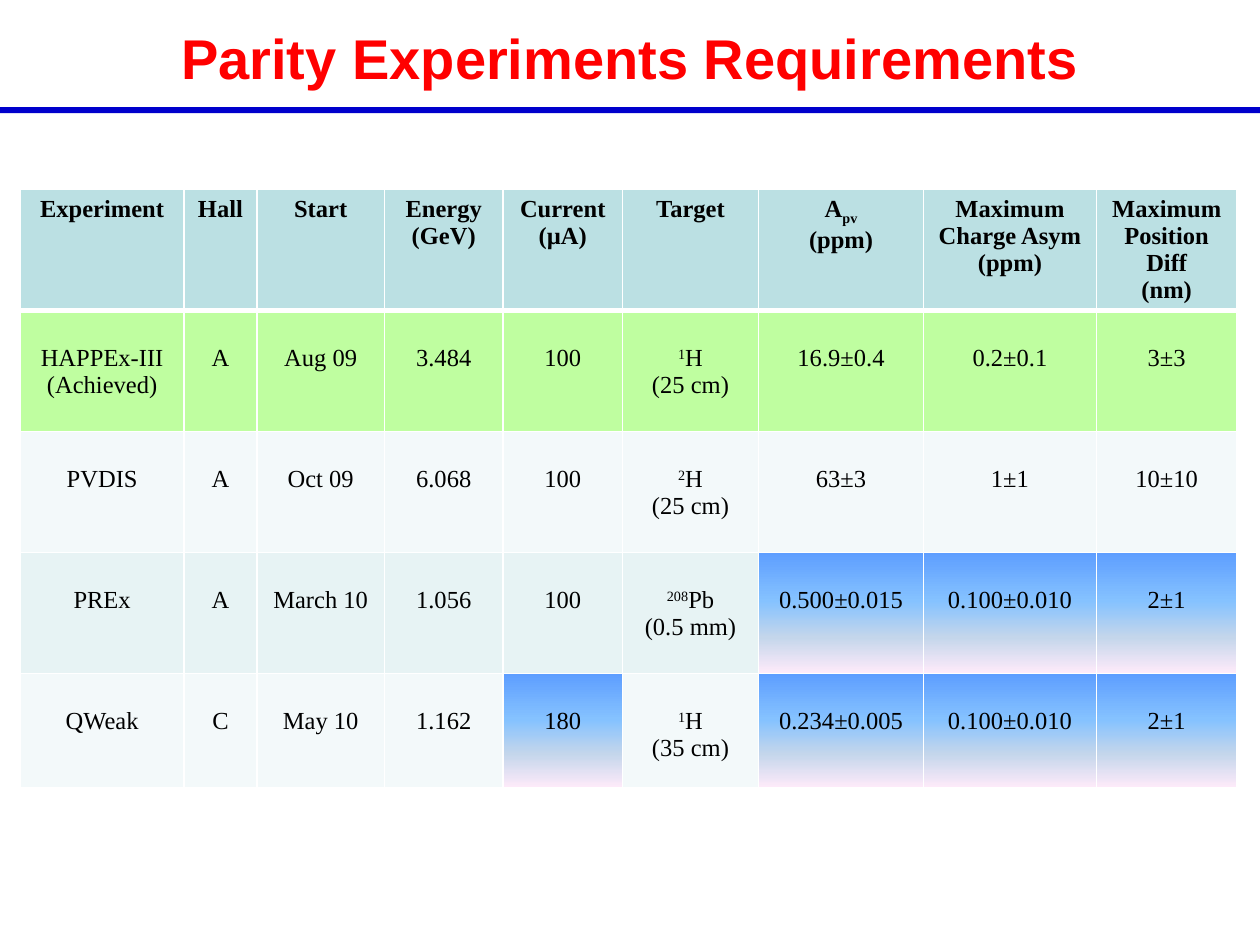
from lxml.etree import SubElement
from pptx import Presentation
from pptx.dml.color import RGBColor
from pptx.enum.shapes import MSO_SHAPE
from pptx.enum.text import MSO_ANCHOR, PP_ALIGN
from pptx.oxml.ns import qn
from pptx.util import Cm, Pt

# Content: ^ encloses a superscript, _ a subscript
TITLE = "Parity Experiments Requirements"
HEADER = ["Experiment", "Hall", "Start", "Energy\n(GeV)", "Current\n(µA)", "Target",
          "A_pv_\n(ppm)", "Maximum Charge Asym\n(ppm)", "Maximum\nPosition Diff\n(nm)"]
EXPERIMENTS = [
    ["HAPPEx-III\n(Achieved)", "A", "Aug 09", "3.484", "100", "^1^H\n(25 cm)",
     "16.9±0.4", "0.2±0.1", "3±3"],
    ["PVDIS", "A", "Oct 09", "6.068", "100", "^2^H\n(25 cm)",
     "63±3", "1±1", "10±10"],
    ["PREx", "A", "March 10", "1.056", "100", "^208^Pb\n(0.5 mm)",
     "0.500±0.015", "0.100±0.010", "2±1"],
    ["QWeak", "C", "May 10", "1.162", "180", "^1^H\n(35 cm)",
     "0.234±0.005", "0.100±0.010", "2±1"],
]
DEMANDING = {(3, 6), (3, 7), (3, 8), (4, 4), (4, 6), (4, 7), (4, 8)}

# Look
RED = RGBColor(0xFF, 0x00, 0x00)
BLUE = RGBColor(0x00, 0x00, 0xCC)
BLACK = RGBColor(0x00, 0x00, 0x00)
WHITE = RGBColor(0xFF, 0xFF, 0xFF)
TEAL = RGBColor(0xBB, 0xE0, 0xE3)
GREEN = RGBColor(0xBF, 0xFE, 0xA0)
PALE = RGBColor(0xF3, 0xF9, 0xFA)
LIGHT_TEAL = RGBColor(0xE7, 0xF3, 0xF4)
ROW_FILLS = [TEAL, GREEN, PALE, LIGHT_TEAL, PALE]
GRADIENT = [(0, RGBColor(0x5E, 0x9E, 0xFF)), (40, RGBColor(0x85, 0xC2, 0xFF)),
            (70, RGBColor(0xC4, 0xD6, 0xEB)), (100, RGBColor(0xFF, 0xEB, 0xFA))]
COLUMN_WIDTHS = [3.3, 1.47, 2.57, 2.39, 2.41, 2.74, 3.33, 3.48, 2.84]
ROW_HEIGHTS = [2.44, 2.44, 2.44, 2.44, 2.31]
BODY_TOP_MARGIN = Cm(0.69)


def add_color(parent, color):
    SubElement(parent, qn("a:srgbClr"), val=str(color))


def set_borders(cell, row):
    properties = cell._tc.get_or_add_tcPr()
    for side in "LRTB":
        thick = (row, side) in {(0, "B"), (1, "T")}
        line = SubElement(properties, qn(f"a:ln{side}"), w=str(Pt(3 if thick else 1)))
        add_color(SubElement(line, qn("a:solidFill")), WHITE)


def set_gradient(cell):
    gradient = SubElement(cell._tc.get_or_add_tcPr(), qn("a:gradFill"), rotWithShape="1")
    stops = SubElement(gradient, qn("a:gsLst"))
    for percent, color in GRADIENT:
        add_color(SubElement(stops, qn("a:gs"), pos=str(percent * 1000)), color)
    SubElement(gradient, qn("a:lin"), ang="5400000", scaled="0")


def write_cell(cell, text, bold):
    frame = cell.text_frame
    for index, line in enumerate(text.split("\n")):
        para = frame.paragraphs[0] if index == 0 else frame.add_paragraph()
        para.alignment = PP_ALIGN.CENTER
        mark, baseline = ("_", "-25000") if "_" in line else ("^", "30000")
        for position, piece in enumerate(line.split(mark)):
            if not piece:
                continue
            span = para.add_run()
            span.text = piece
            span.font.name = "Times New Roman"
            span.font.size = Pt(14)
            span.font.bold = bold
            span.font.color.rgb = BLACK
            if position % 2:
                span._r.get_or_add_rPr().set("baseline", baseline)


deck = Presentation()
deck.slide_width, deck.slide_height = Cm(25.4), Cm(19.05)
page = deck.slides.add_slide(deck.slide_layouts[5])

# Title and the rule below it
title = page.shapes.title
title.left, title.top, title.width, title.height = Cm(0), Cm(0.2), Cm(25.4), Cm(1.9)
title.text_frame.text = TITLE
title.text_frame.vertical_anchor = MSO_ANCHOR.MIDDLE
heading = title.text_frame.paragraphs[0]
heading.alignment = PP_ALIGN.CENTER
font = heading.runs[0].font
font.name, font.size, font.bold = "Arial", Pt(32), True
font.color.rgb = RED

rule = page.shapes.add_shape(MSO_SHAPE.RECTANGLE, Cm(0), Cm(2.16), Cm(25.4), Cm(0.12))
rule.shadow.inherit = False
rule.fill.solid()
rule.fill.fore_color.rgb = BLUE
rule.line.fill.background()

# Requirements table
rows = [HEADER] + EXPERIMENTS
table = page.shapes.add_table(len(rows), len(HEADER), Cm(0.41), Cm(3.82),
                              Cm(sum(COLUMN_WIDTHS)), Cm(sum(ROW_HEIGHTS))).table
table.horz_banding = False
for column, width in zip(table.columns, COLUMN_WIDTHS):
    column.width = Cm(width)
for table_row, height in zip(table.rows, ROW_HEIGHTS):
    table_row.height = Cm(height)

for row, texts in enumerate(rows):
    for col, text in enumerate(texts):
        cell = table.cell(row, col)
        write_cell(cell, text, bold=row == 0)
        if row > 0:
            cell.margin_top = BODY_TOP_MARGIN
        set_borders(cell, row)
        if (row, col) in DEMANDING:
            set_gradient(cell)
        else:
            cell.fill.solid()
            cell.fill.fore_color.rgb = ROW_FILLS[row]

deck.save("out.pptx")
